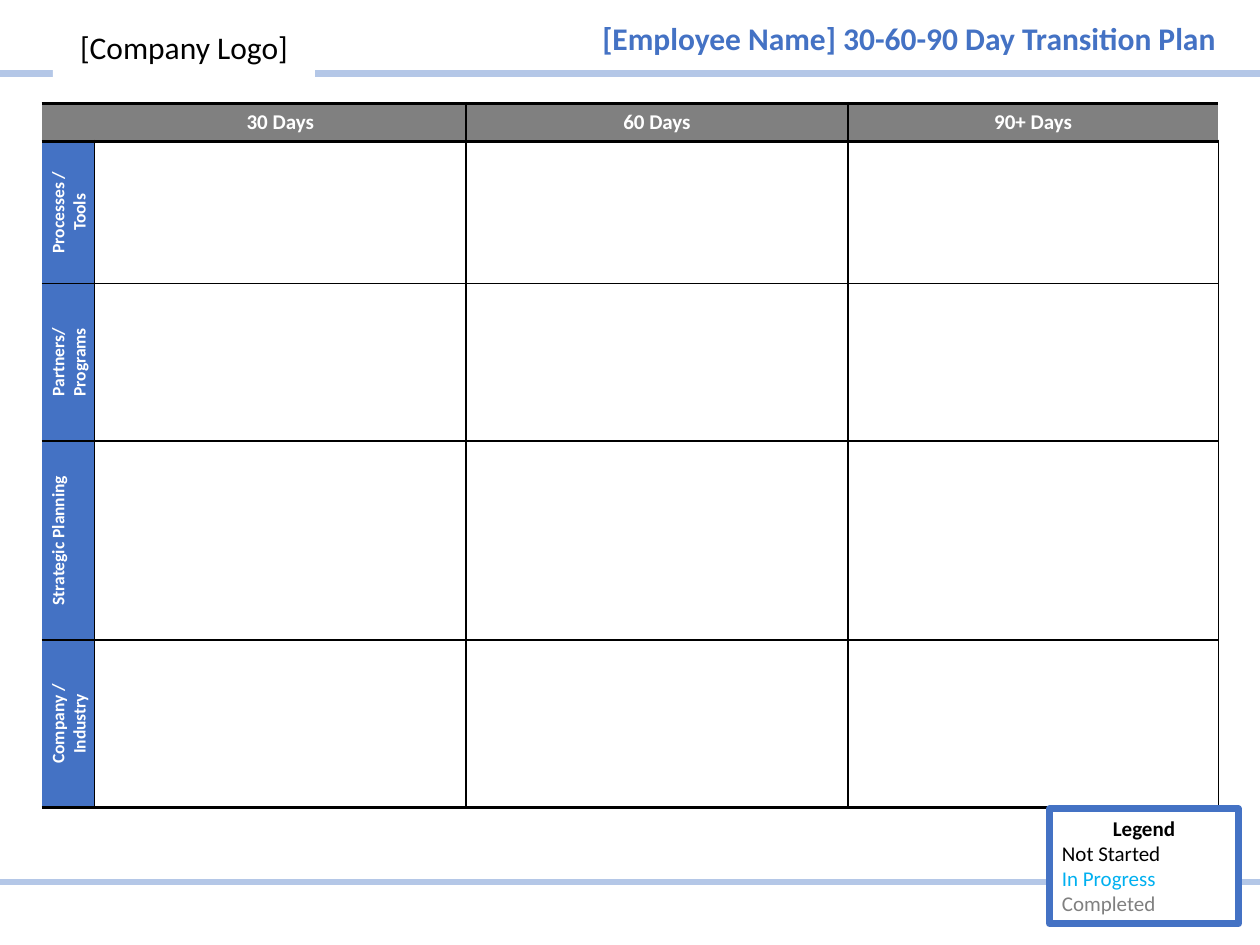
from dataclasses import dataclass

from lxml import etree
from pptx import Presentation
from pptx.dml.color import RGBColor
from pptx.enum.shapes import MSO_CONNECTOR, MSO_SHAPE
from pptx.enum.text import MSO_ANCHOR, MSO_AUTO_SIZE, PP_ALIGN
from pptx.oxml.ns import qn
from pptx.util import Inches, Pt

LEFT, CENTER, RIGHT = PP_ALIGN.LEFT, PP_ALIGN.CENTER, PP_ALIGN.RIGHT
TOP, MIDDLE = MSO_ANCHOR.TOP, MSO_ANCHOR.MIDDLE
FIT_SHAPE = MSO_AUTO_SIZE.SHAPE_TO_FIT_TEXT
RECTANGLE = MSO_SHAPE.RECTANGLE
STRAIGHT = MSO_CONNECTOR.STRAIGHT


@dataclass(frozen=True)
class Theme:
    font: str = "Calibri"
    accent: str = "4472C4"
    rule: str = "B4C7E7"
    header: str = "808080"
    progress: str = "00B0F0"
    black: str = "000000"
    white: str = "FFFFFF"
    title_size: int = 18
    text_size: int = 12
    label_size: int = 10
    thick: int = 2
    thin: int = 1
    heavy: int = 4


THEME = Theme()
PERIODS = ["30 Days", "60 Days", "90+ Days"]
FOCUS_AREAS = ["Processes / Tools", "Partners/Programs", "Strategic Planning", "Company / Industry"]
COLUMN_WIDTHS = [0.42, 2.95, 3.03, 2.94]
ROW_HEIGHTS = [0.3, 1.13, 1.25, 1.58, 1.33]
STATUSES = [("Not Started", THEME.black), ("In Progress", THEME.progress), ("Completed", THEME.header)]


def rgb(color):
    return RGBColor.from_string(color)


def inches(box):
    return [Inches(length) for length in box]


def write(paragraph, text, size=THEME.text_size, color=THEME.black, bold=False, align=LEFT):
    paragraph.alignment = align
    run = paragraph.add_run()
    run.text = text
    run.font.name = THEME.font
    run.font.size = Pt(size)
    run.font.bold = bold
    run.font.color.rgb = rgb(color)


def add_title(slide, box):
    title = slide.shapes.add_textbox(*inches(box)).text_frame
    title.word_wrap = True
    title.auto_size = FIT_SHAPE
    write(title.paragraphs[0], "[Employee Name] 30-60-90 Day Transition Plan",
          size=THEME.title_size, color=THEME.accent, bold=True, align=RIGHT)


def add_rule(slide, box):
    left, top, width = inches(box)
    rule = slide.shapes.add_connector(STRAIGHT, left, top, left + width, top)
    rule.line.color.rgb = rgb(THEME.rule)
    rule.line.width = Pt(THEME.heavy)
    etree.SubElement(rule._element.spPr, qn("a:effectLst"))


def add_panel(slide, box, anchor):
    panel = slide.shapes.add_shape(RECTANGLE, *inches(box))
    panel.shadow.inherit = False
    panel.fill.solid()
    panel.fill.fore_color.rgb = rgb(THEME.white)
    panel.line.fill.background()
    panel.text_frame.word_wrap = True
    panel.text_frame.vertical_anchor = anchor
    return panel


def add_legend(slide, box):
    legend = add_panel(slide, box, TOP)
    legend.line.color.rgb = rgb(THEME.accent)
    legend.line.width = Pt(THEME.heavy)
    frame = legend.text_frame
    frame.auto_size = FIT_SHAPE
    write(frame.paragraphs[0], "Legend", bold=True, align=CENTER)
    for status, color in STATUSES:
        write(frame.add_paragraph(), status, color=color)


def add_logo_space(slide, box):
    logo_space = add_panel(slide, box, MIDDLE)
    write(logo_space.text_frame.paragraphs[0], "[Company Logo]", size=THEME.title_size, align=CENTER)


def set_border(cell, side, width):
    properties = cell._tc.get_or_add_tcPr()
    border = etree.SubElement(properties, qn(f"a:ln{side}"), w=str(Pt(width)))
    if width:
        fill = etree.SubElement(border, qn("a:solidFill"))
        etree.SubElement(fill, qn("a:srgbClr"), val=THEME.black)
    else:
        etree.SubElement(border, qn("a:noFill"))


def set_borders(cell, row, column):
    last_row, last_column = len(FOCUS_AREAS), len(PERIODS)
    left_line = column > 1 or (column == 1 and row > 0)
    right_line = row > 0 or 0 < column < last_column
    set_border(cell, "L", THEME.thin if left_line else 0)
    set_border(cell, "R", THEME.thin if right_line else 0)
    set_border(cell, "T", THEME.thick if row < 2 else THEME.thin)
    set_border(cell, "B", THEME.thick if row in (0, last_row) else THEME.thin)


def fill_cell(cell, row, column):
    set_borders(cell, row, column)
    color = THEME.header if row == 0 else THEME.accent if column == 0 else THEME.white
    cell.fill.solid()
    cell.fill.fore_color.rgb = rgb(color)
    paragraph = cell.text_frame.paragraphs[0]
    if row == 0 and column > 0:
        cell.vertical_anchor = MIDDLE
        write(paragraph, PERIODS[column - 1], color=THEME.white, bold=True, align=CENTER)
    elif row > 0 and column == 0:
        cell.vertical_anchor = MIDDLE
        cell._tc.get_or_add_tcPr().set("vert", "vert270")
        write(paragraph, FOCUS_AREAS[row - 1], size=THEME.label_size,
              color=THEME.white, bold=True, align=CENTER)
    else:
        etree.SubElement(paragraph._p, qn("a:endParaRPr"), sz=str(THEME.text_size * 100))


def add_plan(slide, box):
    plan = slide.shapes.add_table(len(ROW_HEIGHTS), len(COLUMN_WIDTHS), *inches(box)).table
    plan.horz_banding = False
    for column, width in zip(plan.columns, COLUMN_WIDTHS):
        column.width = Inches(width)
    for row, height in zip(plan.rows, ROW_HEIGHTS):
        row.height = Inches(height)
    for row in range(len(ROW_HEIGHTS)):
        for column in range(len(COLUMN_WIDTHS)):
            fill_cell(plan.cell(row, column), row, column)


def main():
    deck = Presentation()
    deck.slide_width, deck.slide_height = Inches(10), Inches(7.5)
    slide = deck.slides.add_slide(deck.slide_layouts[6])
    add_title(slide, (4.25, 0.1, 5.5, 0.4))
    add_plan(slide, (0.33, 0.82, sum(COLUMN_WIDTHS), sum(ROW_HEIGHTS)))
    for top in (0.58, 7):
        add_rule(slide, (0, top, 10))
    add_legend(slide, (8.33, 6.42, 1.5, 0.91))
    add_logo_space(slide, (0.42, 0.08, 2.08, 0.59))
    deck.save("out.pptx")


if __name__ == "__main__":
    main()
